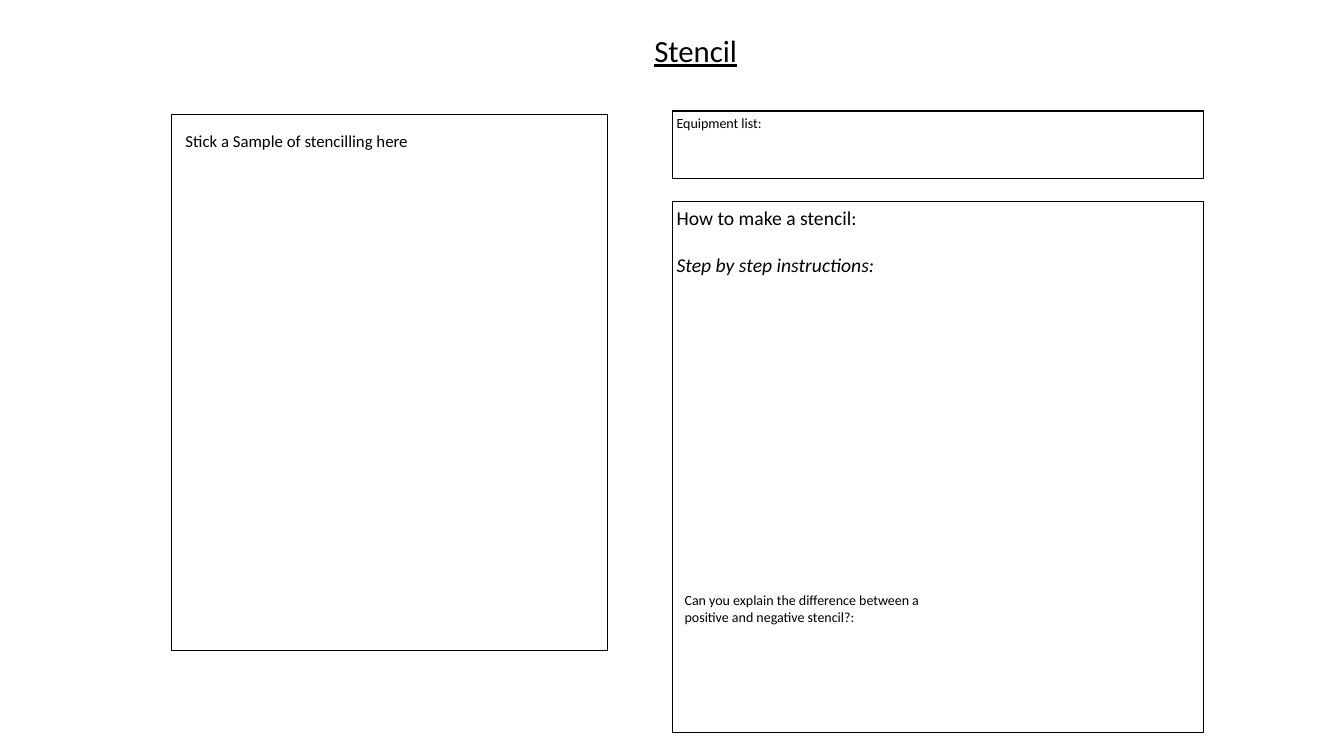
from pptx import Presentation
from pptx.dml.color import RGBColor
from pptx.enum.shapes import MSO_SHAPE
from pptx.enum.text import MSO_ANCHOR, PP_ALIGN
from pptx.util import Inches, Pt

RECT = MSO_SHAPE.RECTANGLE
TOP = MSO_ANCHOR.TOP
LEFT, CENTER = PP_ALIGN.LEFT, PP_ALIGN.CENTER
BLACK = RGBColor(0, 0, 0)
FONT = "Calibri"
WIDTH, HEIGHT = Inches(13.33), Inches(7.5)
INSET = Inches(0.04)

# Shares of the slide, in percent
RIGHT_X, RIGHT_W = 50.04, 39.53


def area(x, y, w, h):
    """Turn percentages of the slide into left, top, width and height."""
    return [round(share * side / 100)
            for share, side in zip((x, y, w, h), (WIDTH, HEIGHT) * 2)]


def set_frame(sp):
    tf = sp.text_frame
    tf.word_wrap = True
    tf.vertical_anchor = TOP
    tf.margin_left = tf.margin_right = INSET
    tf.margin_top = tf.margin_bottom = INSET
    return tf


def write(p, text, size, align=LEFT, underline=None, italic=None):
    p.alignment = align
    r = p.add_run()
    r.text = text
    r.font.name = FONT
    r.font.size = Pt(size)
    r.font.color.rgb = BLACK
    r.font.underline = underline
    r.font.italic = italic


def add_label(s, place, text, size, **style):
    tf = set_frame(s.shapes.add_textbox(*area(*place)))
    write(tf.paragraphs[0], text, size, **style)


def add_panel(s, place, line_width):
    """Draw an outlined box and return its text frame."""
    sp = s.shapes.add_shape(RECT, *area(*place))
    sp.shadow.inherit = False
    sp.fill.background()
    sp.line.color.rgb = BLACK
    sp.line.width = Pt(line_width)
    return set_frame(sp)


def main():
    prs = Presentation()
    prs.slide_width, prs.slide_height = WIDTH, HEIGHT
    s = prs.slides.add_slide(prs.slide_layouts[6])

    add_label(s, (30.61, 3.6, 42.31, 12.27), "Stencil", 22,
              align=CENTER, underline=True)

    add_panel(s, (12.75, 15.2, 32.48, 70.8), 0.75)
    add_label(s, (13.5, 16.8, 22.43, 6.53),
              "Stick a Sample of stencilling here", 12)

    method = add_panel(s, (RIGHT_X, 26.67, RIGHT_W, 70.27), 1)
    write(method.paragraphs[0], "How to make a stencil:", 14)
    steps = method.add_paragraph()
    steps.space_before = Pt(17)
    write(steps, "Step by step instructions:", 14, italic=True)

    equipment = add_panel(s, (RIGHT_X, 14.67, RIGHT_W, 8.93), 1)
    write(equipment.paragraphs[0], "Equipment list:", 10)

    add_label(s, (50.64, 77.73, 20.78, 22.27),
              "Can you explain the difference between a positive "
              "and negative stencil?:", 10)

    prs.save("out.pptx")


if __name__ == "__main__":
    main()
